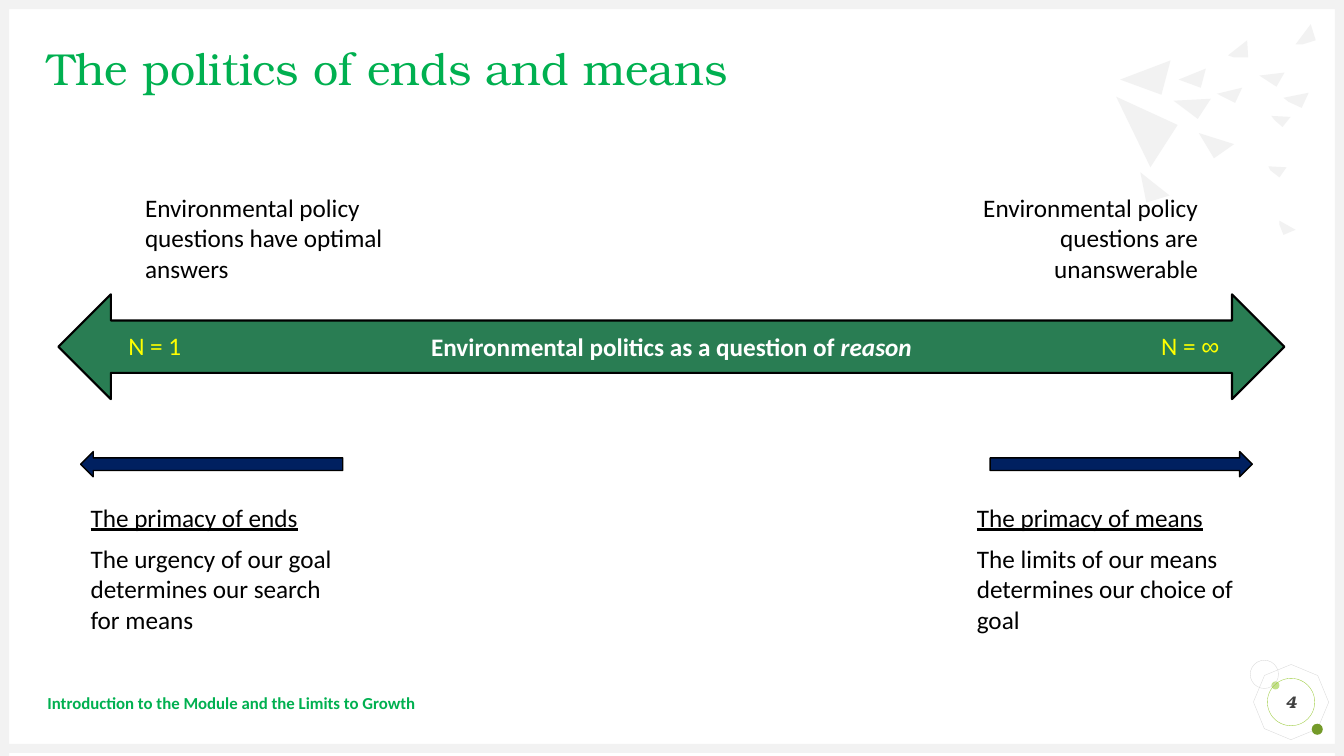
"""Build the slide on the politics of ends and means."""
from dataclasses import dataclass

from lxml.etree import _Element
from pptx import Presentation
from pptx.dml.color import RGBColor
from pptx.enum.shapes import MSO_SHAPE
from pptx.enum.text import MSO_ANCHOR, MSO_AUTO_SIZE, PP_ALIGN
from pptx.shapes.autoshape import Shape
from pptx.slide import Slide
from pptx.text.text import TextFrame, _Paragraph
from pptx.util import Inches, Pt

SERIF = "TeX Gyre Bonum"
GREEN, PALE, BLACK, YELLOW = "00B050", "F2F2F2", "000000", "FFFF00"
Box = tuple[float, float, float, float]
Point = tuple[float, float]


@dataclass(frozen=True)
class Figure:
    """A preset shape with its fill and outline."""
    kind: MSO_SHAPE
    box: Box
    fill: str | None = None
    line: str | None = None
    weight: float = 0.25
    rotation: float = 0


@dataclass(frozen=True)
class Note:
    """A text box with an optional underlined heading."""
    box: Box
    text: str
    heading: str = ""
    align: PP_ALIGN = PP_ALIGN.LEFT


ORNAMENTS = [
    Figure(MSO_SHAPE.OCTAGON, (12.46, 6.62, 0.69, 0.69), line="D9D9D9", rotation=22.7),
    Figure(MSO_SHAPE.OVAL, (12.61, 6.76, 0.08, 0.08), "C2E088"),
    Figure(MSO_SHAPE.OVAL, (13.01, 7.18, 0.11, 0.11), "749A29"),
    Figure(MSO_SHAPE.OVAL, (12.4, 6.55, 0.28, 0.28), line="D9D9D9"),
    Figure(MSO_SHAPE.RECTANGLE, (0, 7.38, 13.33, 0.09), PALE),
    Figure(MSO_SHAPE.RECTANGLE, (0, 0, 13.33, 0.09), PALE),
    Figure(MSO_SHAPE.RECTANGLE, (0, 0, 0.09, 7.5), PALE),
    Figure(MSO_SHAPE.RECTANGLE, (13.24, 0, 0.09, 7.5), PALE),
]
SHARDS: list[list[Point]] = [
    [(11.61, 0.6), (11.52, 0.94), (11.11, 0.79)],
    [(12.01, 0.98), (11.88, 1.18), (11.64, 1)],
    [(11.96, 0.68), (11.91, 0.87), (11.69, 0.79)],
    [(12.32, 0.87), (12.25, 1.02), (12.07, 0.93)],
    [(12.37, 0.4), (12.38, 0.57), (12.24, 0.57), (12.18, 0.55)],
    [(12.8, 1.16), (12.72, 1.26), (12.64, 1.19), (12.61, 1.15)],
    [(13, 0.24), (13.05, 0.4), (12.92, 0.44), (12.85, 0.44)],
    [(12.74, 0.72), (12.66, 0.86), (12.49, 0.75)],
    [(12.98, 0.92), (12.91, 1.07), (12.78, 1.01), (12.73, 0.97)],
    [(11.68, 1.24), (11.41, 1.66), (11.07, 0.96)],
    [(12.24, 1.43), (12.04, 1.57), (11.89, 1.32)],
    [(12.76, 1.66), (12.69, 1.76), (12.6, 1.69), (12.58, 1.65)],
    [(11.6, 1.94), (11.37, 2.01), (11.31, 1.71)],
    [(12.85, 2.28), (12.73, 2.33), (12.69, 2.23), (12.69, 2.19)],
]
NOTES = [
    Note((1.34, 1.86, 2.87, 1.01), "Environmental policy questions have optimal answers"),
    Note((9.11, 1.86, 2.87, 1.01), "Environmental policy questions are unanswerable",
         align=PP_ALIGN.RIGHT),
    Note((0.8, 4.93, 2.6, 1.42), "The urgency of our goal determines our search for means",
         "The primacy of ends"),
    Note((9.59, 4.93, 3.16, 1.42), "The limits of our means determines our choice of goal",
         "The primacy of means"),
]
PAGE_RING = Figure(MSO_SHAPE.OVAL, (12.57, 6.73, 0.47, 0.47), line="9ACB39")
SPECTRUM = Figure(MSO_SHAPE.LEFT_RIGHT_ARROW, (0.58, 2.92, 12.16, 1.04), "297D53", BLACK, 1.5)
POINTERS = [Figure(MSO_SHAPE.LEFT_ARROW, (x, 4.48, 2.6, 0.25), "002060", BLACK, 1, turn)
            for x, turn in ((0.8, 0), (9.82, 180))]


def rgb(value: str) -> RGBColor:
    """Turn a hex string into a colour."""
    return RGBColor.from_string(value)


def paint(sp: Shape, fill: str | None, line: str | None, weight: float) -> None:
    """Set fill and outline and drop the shadow."""
    sp.shadow.inherit = False
    for part, colour in ((sp.fill, fill), (sp.line.fill, line)):
        if colour:
            part.solid()
            part.fore_color.rgb = rgb(colour)
        else:
            part.background()
    if line:
        sp.line.width = Pt(weight)


def draw(s: Slide, figure: Figure) -> Shape:
    """Add a preset shape."""
    sp = s.shapes.add_shape(figure.kind, *map(Inches, figure.box))
    sp.rotation = figure.rotation
    paint(sp, figure.fill, figure.line, figure.weight)
    return sp


def draw_shard(s: Slide, points: list[Point]) -> None:
    """Add a pale polygon."""
    corners = [(Inches(x), Inches(y)) for x, y in points]
    builder = s.shapes.build_freeform(*corners[0])
    builder.add_line_segments(corners[1:], close=True)
    paint(builder.convert_to_shape(), PALE, None, 0)


def write(p: _Paragraph, text: str, *, size: float = 18, font: str = "Calibri",
          colour: str = BLACK, bold: bool = False, italic: bool = False,
          underline: bool = False, align: PP_ALIGN = PP_ALIGN.LEFT) -> None:
    """Add a formatted run to a paragraph."""
    p.alignment = align
    r = p.add_run()
    r.text = text
    r.font.size = Pt(size)
    r.font.name = font
    r.font.color.rgb = rgb(colour)
    r.font.bold, r.font.italic, r.font.underline = bold, italic, underline


def frame(sp: Shape, tight: bool = False) -> TextFrame:
    """Return a wrapped, middle-anchored text frame, with no insets if tight."""
    tf = sp.text_frame
    tf.word_wrap = True
    tf.auto_size = MSO_AUTO_SIZE.NONE
    tf.vertical_anchor = MSO_ANCHOR.MIDDLE
    if tight:
        tf.margin_left = tf.margin_top = tf.margin_right = tf.margin_bottom = 0
    return tf


def add_box(s: Slide, box: Box) -> TextFrame:
    """Add a text box that grows with its text."""
    tf = frame(s.shapes.add_textbox(*map(Inches, box)))
    tf.auto_size = MSO_AUTO_SIZE.SHAPE_TO_FIT_TEXT
    tf.vertical_anchor = MSO_ANCHOR.TOP
    return tf


def add_note(s: Slide, note: Note) -> None:
    """Add a note, with its heading above if it has one."""
    tf = add_box(s, note.box)
    p = tf.paragraphs[0]
    if note.heading:
        write(p, note.heading, underline=True)
        p.space_after = Pt(8)
        p = tf.add_paragraph()
    write(p, note.text, align=note.align)


def add_title(s: Slide) -> None:
    """Place and fill the title."""
    sp = s.shapes.title
    sp.left, sp.top, sp.width, sp.height = map(Inches, (0.47, 0.47, 12.4, 0.47))
    p = frame(sp, tight=True).paragraphs[0]
    p.line_spacing = 0.9
    write(p, "The politics of ends and means", size=32, font=SERIF, colour=GREEN)


def add_footer(s: Slide) -> None:
    """Add the module name and the page number."""
    sp = s.shapes.add_textbox(*map(Inches, (0.47, 6.77, 9.61, 0.4)))
    write(frame(sp, tight=True).paragraphs[0],
          "Introduction to the Module and the Limits to Growth",
          size=12, colour=GREEN, bold=True)
    write(frame(draw(s, PAGE_RING), tight=True).paragraphs[0], "4", size=12, font=SERIF,
          colour="404040", bold=True, italic=True, align=PP_ALIGN.CENTER)


def add_spectrum(s: Slide) -> None:
    """Add the double arrow."""
    p = frame(draw(s, SPECTRUM)).paragraphs[0]
    p.space_after = Pt(10)
    for text, italic in (("Environmental politics as a question of ", False), ("reason", True)):
        write(p, text, colour="FFFFFF", bold=True, italic=italic, align=PP_ALIGN.CENTER)


def add_end_label(s: Slide, left: float, value: str, font: str) -> None:
    """Label one end of the double arrow."""
    p = add_box(s, (left, 3.23, 1.19, 0.4)).paragraphs[0]
    write(p, "N = ", colour=YELLOW, align=PP_ALIGN.CENTER)
    write(p, value, font=font, colour=YELLOW, align=PP_ALIGN.CENTER)


def main() -> None:
    """Build and save the slide."""
    prs = Presentation()
    prs.slide_width, prs.slide_height = Inches(13.33), Inches(7.5)
    s = prs.slides.add_slide(prs.slide_layouts[5])
    for figure in ORNAMENTS:
        draw(s, figure)
    for points in SHARDS:
        draw_shard(s, points)
    add_title(s)
    add_footer(s)
    add_spectrum(s)
    for note in NOTES:
        add_note(s, note)
    add_end_label(s, 0.94, "1", "Calibri")
    add_end_label(s, 11.21, "∞", "Arial")
    for pointer in POINTERS:
        draw(s, pointer)
    prs.save("out.pptx")


if __name__ == "__main__":
    main()
